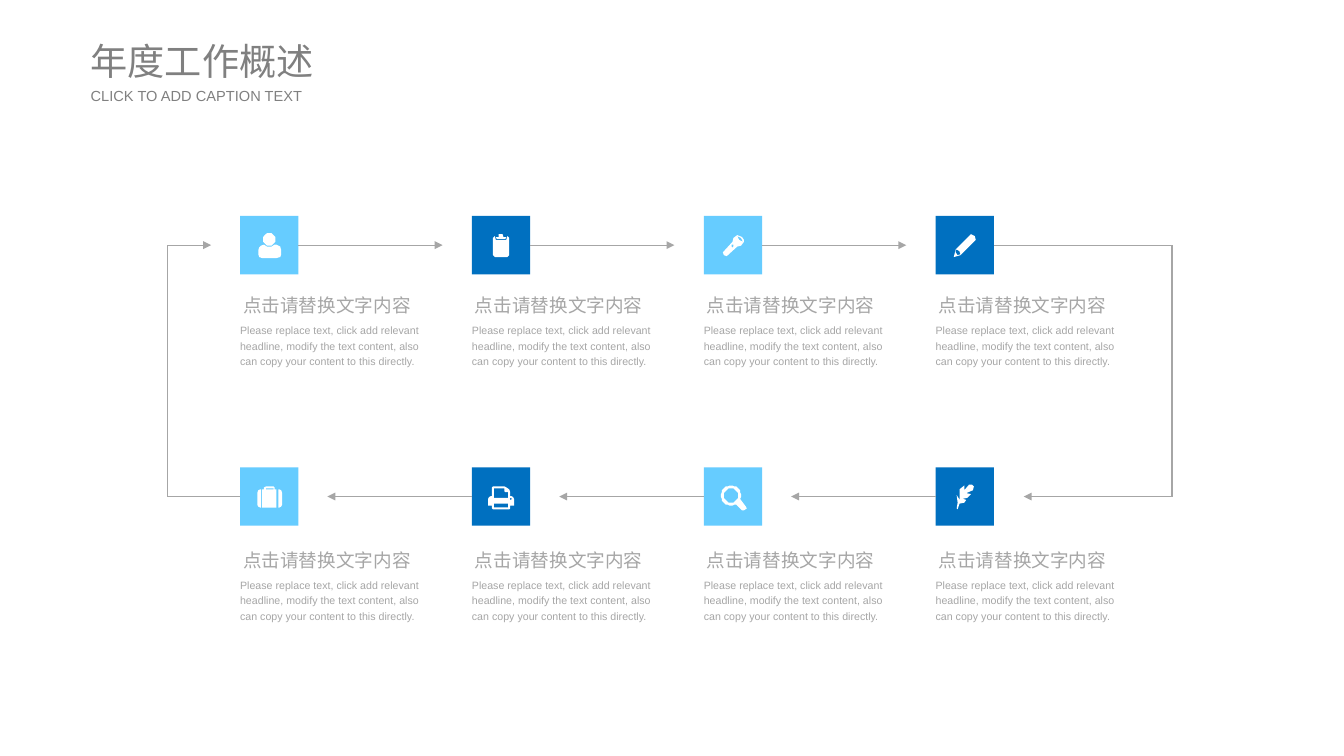
from math import cos, radians, sin

from lxml.etree import SubElement
from pptx import Presentation
from pptx.dml.color import RGBColor
from pptx.enum.shapes import MSO_CONNECTOR, MSO_SHAPE
from pptx.enum.text import MSO_ANCHOR, MSO_AUTO_SIZE
from pptx.oxml.ns import qn
from pptx.util import Cm, Pt

COLORS = {"light": "66CCFF", "dark": "0070C0", "icon": "FFFFFF",
          "gray": "A6A6A6", "title": "808080"}
HEADING = "点击请替换文字内容"
BODY = ("Please replace text, click add relevant headline, modify the text "
        "content, also can copy your content to this directly.")
TILE = 1.55
LEFT, PITCH = 6.38, 6.16
ROWS = [(5.74, 7.7), (12.42, 14.47)]
ICON_UNIT = Cm(2.54) / 100


def add_text(text, x, y, w, h, size, color, anchor=MSO_ANCHOR.TOP, spacing=1.0):
    tf = slide.shapes.add_textbox(Cm(x), Cm(y), Cm(w), Cm(h)).text_frame
    tf.margin_left = tf.margin_right = tf.margin_top = tf.margin_bottom = 0
    tf.word_wrap = True
    tf.auto_size = MSO_AUTO_SIZE.SHAPE_TO_FIT_TEXT
    tf.vertical_anchor = anchor
    p = tf.paragraphs[0]
    p.text = text
    p.line_spacing = spacing
    p.font.name = "Arial"
    p.font.size = Pt(size)
    p.font.color.rgb = RGBColor.from_string(COLORS[color])
    return p


def arc(cx, cy, radius, start=0, end=360):
    return [(cx + radius * cos(radians(a)), cy + radius * sin(radians(a)))
            for a in range(start, end, 10)]


person = [
    [arc(30.5, 24.5, 6.5)],
    [[(43, 36), (42, 32), (40, 31), (38, 30), (36, 30), (33, 32), (31, 32),
      (28, 32), (25, 30), (22, 31), (20, 33), (19, 36), (19, 40), (20, 43),
      (23, 44), (38, 44), (42, 43), (43, 40)]],
]
clipboard = [
    [[(37, 21), (36, 25), (25, 25), (24, 21), (22, 23), (22, 41), (24, 43),
      (37, 43), (39, 41), (39, 23)]],
    [[(35, 24), (36, 22), (33, 22), (32, 19), (28, 19), (28, 22), (25, 22),
      (26, 24)]],
]
torch = [[
    [(40, 22), (35, 20), (31, 23), (30, 27), (20, 38), (21, 41), (24, 42),
     (35, 32), (39, 31), (42, 27), (42, 25)],
    [(37, 25), (35, 21), (39, 23), (41, 27)],
    [(29, 32), (29, 30), (31, 30), (31, 32), (30, 33)],
]]
pencil = [[
    [(41, 21), (37, 19), (21, 35), (19, 43), (26, 41), (42, 25)],
    [(26, 40), (23, 41), (21, 38), (21, 36), (22, 35), (25, 37)],
]]
suitcase = [
    [[(19, 24), (18, 27), (18, 39), (19, 41), (21, 42), (22, 42), (22, 23),
      (21, 23)]],
    [[(36, 21), (35, 20), (27, 20), (25, 21), (25, 23), (23, 23), (23, 42),
      (38, 42), (38, 23), (36, 23)],
     [(35, 23), (27, 23), (27, 22), (35, 22)]],
    [[(43, 24), (41, 23), (40, 23), (40, 42), (41, 42), (43, 41), (44, 39),
      (44, 27)]],
]
printer = [[
    [(43, 31), (41, 30), (40, 30), (40, 26), (39, 23), (36, 21), (34, 20),
     (22, 20), (21, 21), (21, 30), (20, 30), (18, 31), (17, 33), (17, 40),
     (21, 40), (21, 43), (22, 44), (39, 44), (40, 43), (40, 40), (44, 40),
     (44, 33)],
    [(40, 34), (40, 32), (41, 32), (42, 33), (41, 34)],
    [(38, 32), (23, 32), (23, 22), (34, 22), (34, 25), (35, 26), (38, 26)],
    [(38, 42), (23, 42), (23, 38), (38, 38)],
]]
magnifier = [[
    arc(28.5, 29.5, 10.5, 60, 390) + [(44, 41), (45, 43), (42, 45), (40, 45)],
    arc(28.5, 29.5, 7.5),
]]
feather = [[
    [(23, 44), (25, 38), (30, 37), (32, 34), (28, 33), (33, 32), (37, 28),
     (32, 27), (39, 24), (40, 20), (38, 18), (35, 18), (30, 24), (30, 19),
     (25, 23), (25, 34), (22, 29), (23, 37), (22, 43)],
]]
icon_rows = [[person, clipboard, torch, pencil],
             [suitcase, printer, magnifier, feather]]

prs = Presentation()
prs.slide_width, prs.slide_height = Cm(35.71), Cm(20.09)
slide = prs.slides.add_slide(prs.slide_layouts[6])

add_text("年度工作概述", 2.41, 0.99, 6.43, 1.24, 28, "title", MSO_ANCHOR.MIDDLE)
add_text("CLICK TO ADD CAPTION TEXT", 2.41, 2.29, 6.43, 0.48, 11, "title",
         MSO_ANCHOR.MIDDLE)

for (top, text_top), icons in zip(ROWS, icon_rows):
    for col, icon in enumerate(icons):
        x = LEFT + col * PITCH
        tile = slide.shapes.add_shape(MSO_SHAPE.RECTANGLE, Cm(x), Cm(top),
                                      Cm(TILE), Cm(TILE))
        parts = [(tile, "dark" if col % 2 else "light")]
        for contours in icon:
            builder = slide.shapes.build_freeform(*contours[0][0], scale=ICON_UNIT)
            for i, points in enumerate(contours):
                if i:
                    builder.move_to(*points[0])
                builder.add_line_segments(points[1:], close=True)
            parts.append((builder.convert_to_shape(Cm(x), Cm(top)), "icon"))
        for sp, color in parts:
            sp.shadow.inherit = False
            sp.fill.solid()
            sp.fill.fore_color.rgb = RGBColor.from_string(COLORS[color])
            sp.line.fill.background()

        add_text(BODY, x, text_top + 0.85, 5.13, 1.19, 8, "gray", spacing=1.2)
        p = add_text(HEADING, x + 0.08, text_top, 6.32, 0.66, 14, "gray", spacing=1.2)
        p.space_before = Pt(2.8)

top_y, bottom_y = [top + TILE / 2 for top, _ in ROWS]
loop_left, loop_right = 4.45, 31.14
columns = [LEFT + col * PITCH for col in range(4)]
lines = [(x + TILE, top_y, x + 5.38, top_y, True) for x in columns[:3]]
lines += [(x, bottom_y, x - 3.84, bottom_y, True) for x in columns[1:]]
lines += [
    (columns[3] + TILE, top_y, loop_right, top_y, False),
    (loop_right, top_y, loop_right, bottom_y, False),
    (loop_right, bottom_y, 27.2, bottom_y, True),
    (LEFT, bottom_y, loop_left, bottom_y, False),
    (loop_left, bottom_y, loop_left, top_y, False),
    (loop_left, top_y, 5.61, top_y, True),
]
for x1, y1, x2, y2, has_arrow in lines:
    line = slide.shapes.add_connector(MSO_CONNECTOR.STRAIGHT, Cm(x1), Cm(y1),
                                      Cm(x2), Cm(y2))
    line.line.color.rgb = RGBColor.from_string(COLORS["gray"])
    line.line.width = Pt(1)
    if has_arrow:
        SubElement(line.line._get_or_add_ln(), qn("a:tailEnd"), type="triangle")
    SubElement(line._element.spPr, qn("a:effectLst"))

prs.save("out.pptx")
